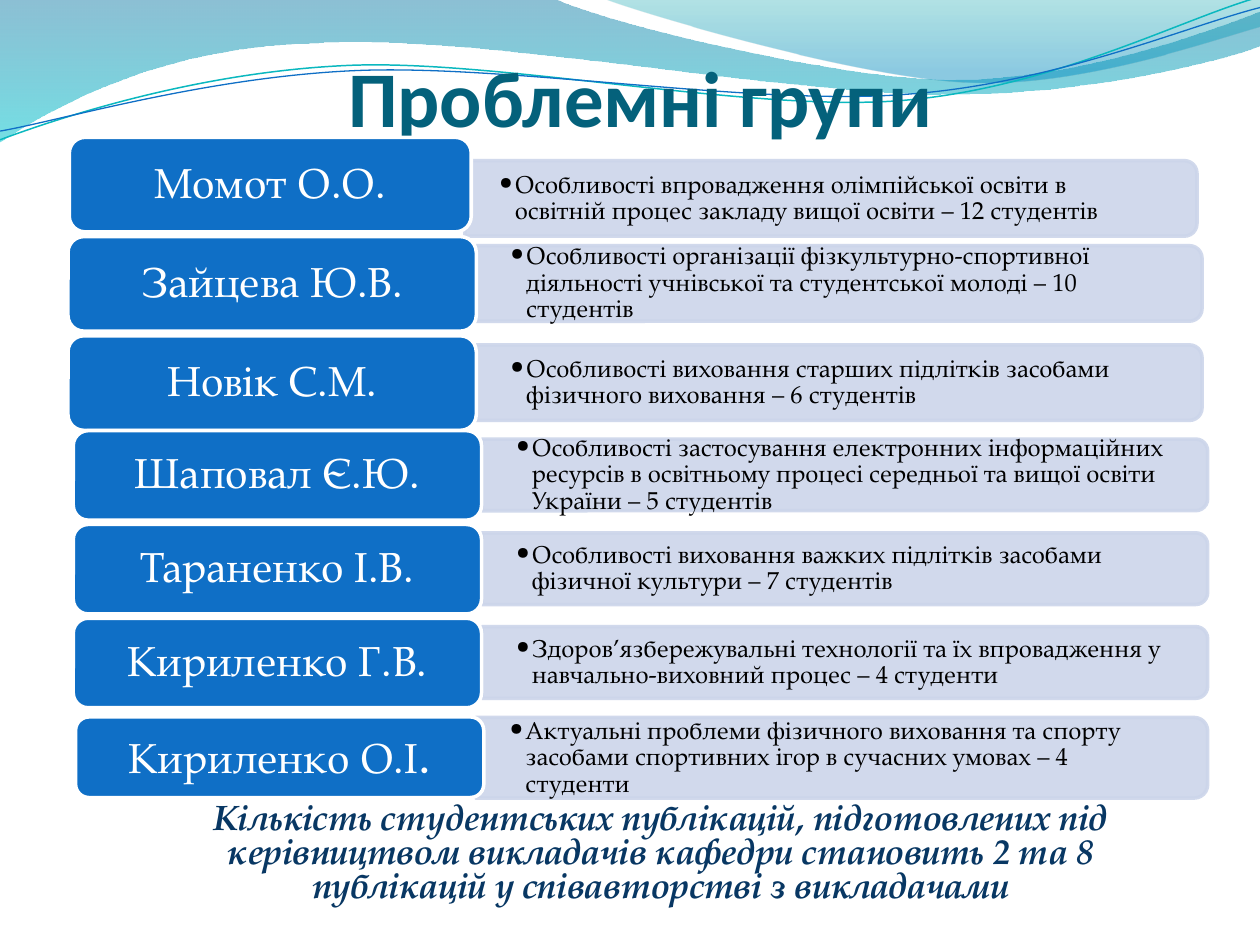
"""Build a slide listing the student research groups and their leaders."""
import pptx
import pptx.util
import pptx.dml.color
import pptx.enum.shapes
import pptx.enum.text
import pptx.oxml
import pptx.oxml.ns

Pt = pptx.util.Pt
RGB = pptx.dml.color.RGBColor
KIND = pptx.enum.shapes.MSO_SHAPE
ALIGN = pptx.enum.text.PP_ALIGN
ANCHOR = pptx.enum.text.MSO_ANCHOR
qn = pptx.oxml.ns.qn

BLUE = RGB(0x0F, 0x6F, 0xC6)
TEAL = RGB(0x0A, 0xB8, 0xBF)
PALE = RGB(0xCC, 0xD5, 0xEA)
WHITE = RGB(0xFF, 0xFF, 0xFF)
BLACK = RGB(0x00, 0x00, 0x00)
TITLE = RGB(0x04, 0x61, 0x7B)
NAVY = RGB(0x08, 0x37, 0x63)
DEEP = RGB(0x00, 0x74, 0xA1)
CYAN = RGB(0x00, 0xC6, 0xCF)
GREEN = RGB(0x00, 0xA1, 0xA9)
SKY = RGB(0x00, 0x8B, 0xBF)
SERIF = "TeX Gyre Pagella"

WAVES = [
    ([(0, 0), (316.8, -0.7), (342.7, 12.2, 478, 45.4, 545.8, 45.4),
      (614.2, 45.4, 689.8, 18.7, 720, 6.5), (720.7, 25.9),
      (707.8, 31.7, 626.4, 54.7, 537.1, 54), (447.8, 54, 275, 20.2, 185, 24.5),
      (92.9, 25.9, 33.1, 59.8, -0.7, 81.4)],
     [(0, DEEP, 45), (1, CYAN, 55)]),
    ([(344.9, -0.7), (366.5, 7.9, 491, 44.6, 553.7, 46.8),
      (616.3, 49.7, 691.9, 23, 720, 15.1), (720, 0)],
     [(0, GREEN, 30), (0.8, SKY, 45)]),
]
CURVES = [
    ([(0, 79.9), (34.6, 67, 113.8, 41, 199.4, 37.4),
      (284.4, 33.8, 427, 64.1, 513.4, 57.6), (599.8, 51.1, 675.4, 10.8, 718.6, -1.4)],
     TEAL, 0.85),
    ([(0, 74.9), (33.8, 69.1, 118.1, 43.9, 203.8, 40.3),
      (290.2, 36.7, 430.6, 60.5, 516.2, 54), (601.9, 48.2, 677.5, 15.1, 720, 4.3)],
     BLUE, 0.75),
]
GROUPS = [
    ((39.6, 78.5, 229.7, 54), (265.7, 91.8, 418.3, 43.2), 0, [
        ("Момот О.О.", "Особливості впровадження олімпійської освіти в освітній процес "
         "закладу вищої освіти – 12 студентів")]),
    ((38.9, 135.2, 233.3, 54), (272.2, 140.4, 414.7, 43.2), 56.7, [
        ("Зайцева Ю.В.", "Особливості організації фізкультурно-спортивної діяльності "
         "учнівської та студентської молоді – 10 студентів"),
        ("Новік С.М.", "Особливості виховання старших підлітків засобами фізичного "
         "виховання – 6 студентів")]),
    ((41.9, 246.1, 233.3, 51.1), (275.4, 250.9, 414.7, 41), 53.6, [
        ("Шаповал Є.Ю.", "Особливості застосування електронних інформаційних ресурсів "
         "в освітньому процесі середньої та вищої освіти України – 5 студентів"),
        ("Тараненко І.В.", "Особливості виховання важких підлітків засобами фізичної "
         "культури – 7 студентів"),
        ("Кириленко Г.В.", "Здоров’язбережувальні технології та їх впровадження у "
         "навчально-виховний процес – 4 студенти")]),
    ((43.2, 409.7, 233.3, 46.1), (271.8, 410, 418.3, 46.1), 0, [
        ("Кириленко О.І", "Актуальні проблеми фізичного виховання та спорту засобами "
         "спортивних ігор в сучасних умовах – 4 студенти")]),
]


def write(shape, words, size=24, color=WHITE, font=SERIF, bold=False, italic=False,
          align=ALIGN.CENTER, anchor=ANCHOR.MIDDLE, space=0.9, pad=(7.2, 3.6, 7.2, 3.6),
          bullet=False):
    """Append a formatted run to the first paragraph of a shape."""
    frame = shape.text_frame
    frame.word_wrap = True
    frame.vertical_anchor = anchor
    (frame.margin_left, frame.margin_top,
     frame.margin_right, frame.margin_bottom) = [Pt(side) for side in pad]
    para = frame.paragraphs[0]
    para.alignment, para.line_spacing = align, space
    if bullet:
        para.level = 1
        props = para._p.get_or_add_pPr()
        props.set("marL", str(Pt(9)))
        props.set("indent", str(-Pt(9)))
        for tag, key, value in (("a:buFont", "typeface", font), ("a:buChar", "char", "•")):
            props.append(props.makeelement(qn(tag), {key: value}))
    run = para.add_run()
    run.text = words
    run.font.name, run.font.size = font, Pt(size)
    run.font.bold, run.font.italic = bold, italic
    run.font.color.rgb = color


def fade(shape, rates):
    """Set the opacity in percent of each colour of a shape in turn."""
    for node, rate in zip(shape._element.spPr.iter(qn("a:srgbClr")), rates):
        node.append(node.makeelement(qn("a:alpha"), {"val": str(rate * 1000)}))


def trace(slide, route, close):
    """Draw an outline whose six-number parts are cubic curves."""
    dots = [(Pt(part[i]), Pt(part[i + 1])) for part in route
            for i in range(0, len(part), 2)]
    pen = slide.shapes.build_freeform(*dots[0])
    pen.add_line_segments(dots[1:], close=close)
    shape = pen.convert_to_shape()
    shape.shadow.inherit = False
    lines = iter(list(shape._element.spPr.iter(qn("a:lnTo"))))
    for part in route[1:]:
        first = next(lines)
        if len(part) == 6:
            first.tag = qn("a:cubicBezTo")
            for line in (next(lines), next(lines)):
                first.append(line[0])
                line.getparent().remove(line)
    return shape


def wave(slide, route, stops):
    """Draw a wave filled with a see-through gradient."""
    shape = trace(slide, route, True)
    shape.line.fill.background()
    shape.fill.gradient()
    shape.fill.gradient_angle = 270
    for stop, (place, color, rate) in zip(shape.fill.gradient_stops, stops):
        stop.position, stop.color.rgb = place, color
    fade(shape, [rate for place, color, rate in stops])


def curve(slide, route, color, width):
    """Draw a thin open curve."""
    shape = trace(slide, route, False)
    shape.fill.background()
    shape.line.color.rgb, shape.line.width = color, Pt(width)


def block(slide, kind, box, fill, line):
    """Draw a preset shape with a two-point outline."""
    shape = slide.shapes.add_shape(kind, *[Pt(side) for side in box])
    shape.shadow.inherit = False
    shape.fill.solid()
    shape.fill.fore_color.rgb = fill
    shape.line.color.rgb, shape.line.width = line, Pt(2)
    return shape


def label(slide, box, words, **style):
    """Add a text box."""
    shape = slide.shapes.add_textbox(*[Pt(side) for side in box])
    write(shape, words, **style)
    return shape


def row(slide, card, band, name, topic):
    """Draw a leader card with its topic band and return the name label."""
    left, top, width, height = band
    shift = (width - height) / 2
    back = block(slide, KIND.ROUND_2_SAME_RECTANGLE,
                 (left + shift, top - shift, height, width), PALE, PALE)
    back.rotation = 90
    fade(back, (90, 90))
    label(slide, (left + 0.3, top + 2.1, width - 2, height - 4.2), topic, size=14,
          color=BLACK, align=ALIGN.LEFT, pad=(19.2, 9.6, 19.2, 9.6), bullet=True)
    block(slide, KIND.ROUNDED_RECTANGLE, card, BLUE, WHITE)
    left, top, width, height = card
    return label(slide, (left + 2.5, top + 2.5, width - 5, height - 5), name)


def main():
    """Build and save the slide."""
    deck = pptx.Presentation()
    deck.slide_width, deck.slide_height = Pt(720), Pt(540)
    slide = deck.slides.add_slide(deck.slide_layouts[6])
    for route, stops in WAVES:
        wave(slide, route, stops)
    for route, color, width in CURVES:
        curve(slide, route, color, width)
    label(slide, (41.8, 23.8, 648, 58.3), "Проблемні групи", size=45, color=TITLE,
          font="Calibri", bold=True, anchor=ANCHOR.BOTTOM, space=1, pad=(0, 3.6, 0, 0))
    total = label(slide, (95.8, 455.8, 563.8, 65.5),
                  "Кількість студентських публікацій, підготовлених під керівництвом "
                  "викладачів кафедри становить 2 та 8 публікацій у співавторстві з "
                  "викладачами", size=20, color=NAVY, bold=True, italic=True,
                  anchor=ANCHOR.TOP, space=0.8)
    total.text_frame.auto_size = pptx.enum.text.MSO_AUTO_SIZE.SHAPE_TO_FIT_TEXT
    for card, band, pitch, pairs in GROUPS:
        for index, (name, topic) in enumerate(pairs):
            spots = [(x, y + index * pitch, w, h) for x, y, w, h in (card, band)]
            last = row(slide, *spots, name, topic)
    write(last, ".", size=29)
    deck.save("out.pptx")


if __name__ == "__main__":
    main()
